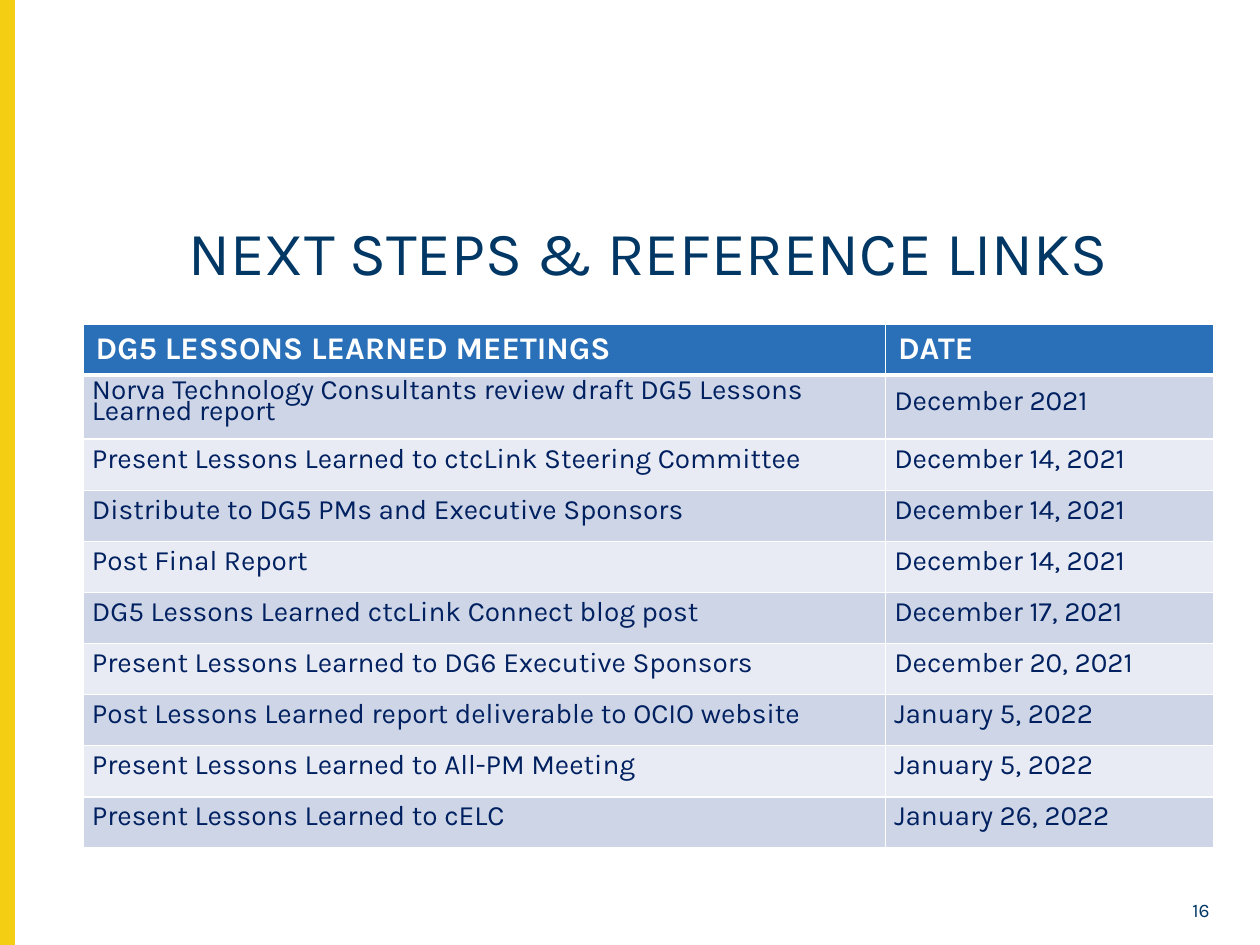
from lxml import etree
from pptx import Presentation
from pptx import util as u
from pptx.dml.color import RGBColor
from pptx.enum import shapes, text
from pptx.oxml import ns

WIDTH, HEIGHT = 10, 7.5
FONT = "Karla"
NAVY, CELL_NAVY, WHITE = "003764", "002060", "FFFFFF"
YELLOW, HEADER_BLUE = "F4CE12", "2A70B8"
BANDS = ["CDD5E6", "E8EBF3"]

HEADINGS = ["DG5 LESSONS LEARNED MEETINGS", "DATE"]
MEETINGS = [
    ("Norva Technology Consultants review draft DG5 Lessons Learned report", "December 2021"),
    ("Present Lessons Learned to ctcLink Steering Committee", "December 14, 2021"),
    ("Distribute to DG5 PMs and Executive Sponsors", "December 14, 2021"),
    ("Post Final Report", "December 14, 2021"),
    ("DG5 Lessons Learned ctcLink Connect blog post", "December 17, 2021"),
    ("Present Lessons Learned to DG6 Executive Sponsors", "December 20, 2021"),
    ("Post Lessons Learned report deliverable to OCIO website", "January 5, 2022"),
    ("Present Lessons Learned to All-PM Meeting", "January 5, 2022"),
    ("Present Lessons Learned to cELC", "January 26, 2022"),
]


def color(value):
    return RGBColor.from_string(value)


def inches(box):
    return [u.Inches(length) for length in box]


def add_run(paragraph, words, size, fill, bold=False):
    run = paragraph.add_run()
    run.text = words
    run.font.name = FONT
    run.font.size = u.Pt(size)
    run.font.bold = bold
    run.font.color.rgb = color(fill)


def add_label(slide, box, words, size, alignment, anchor, line_spacing=None):
    frame = slide.shapes.add_textbox(*inches(box)).text_frame
    frame.word_wrap = True
    frame.vertical_anchor = anchor
    paragraph = frame.paragraphs[0]
    paragraph.alignment = alignment
    paragraph.line_spacing = line_spacing
    add_run(paragraph, words, size, NAVY)


def add_side_bar(slide, box):
    bar = slide.shapes.add_shape(shapes.MSO_SHAPE.RECTANGLE, *inches(box))
    bar.shadow.inherit = False
    bar.fill.solid()
    bar.fill.fore_color.rgb = color(YELLOW)
    bar.line.color.rgb = color(YELLOW)
    bar.line.width = u.Pt(1)


def style_cell(cell, fill, bottom_width):
    # Borders come before the fill in the cell properties
    properties = cell._tc.get_or_add_tcPr()
    for side, width in (("L", 1), ("R", 1), ("T", 1), ("B", bottom_width)):
        border = etree.SubElement(properties, ns.qn(f"a:ln{side}"), w=str(u.Pt(width)))
        solid = etree.SubElement(border, ns.qn("a:solidFill"))
        etree.SubElement(solid, ns.qn("a:srgbClr"), val=WHITE)
    cell.fill.solid()
    cell.fill.fore_color.rgb = color(fill)


def add_header_cell(cell, words):
    style_cell(cell, HEADER_BLUE, 3)
    add_run(cell.text_frame.paragraphs[0], words, 18, WHITE, True)


def add_body_cell(cell, words, fill):
    style_cell(cell, fill, 1)
    cell.vertical_anchor = text.MSO_ANCHOR.MIDDLE
    cell.margin_left = cell.margin_right = u.Inches(0.07)
    cell.margin_top = cell.margin_bottom = 0
    paragraph = cell.text_frame.paragraphs[0]
    paragraph.line_spacing = u.Pt(12)
    paragraph.space_after = u.Pt(6)
    add_run(paragraph, words, 16, CELL_NAVY)


def add_schedule(slide, box):
    row_count = len(MEETINGS) + 1
    table = slide.shapes.add_table(row_count, len(HEADINGS), *inches(box)).table
    _, _, width, height = box

    # Column shares; the two-line row is taller, the others are equal
    for column, share in zip(table.columns, (0.71, 0.29)):
        column.width = u.Inches(width * share)
    tall_row = 0.51
    for index, row in enumerate(table.rows):
        row.height = u.Inches(tall_row if index == 1 else (height - tall_row) / (row_count - 1))

    for column, heading in enumerate(HEADINGS):
        add_header_cell(table.cell(0, column), heading)
    for index, meeting in enumerate(MEETINGS):
        for column, words in enumerate(meeting):
            add_body_cell(table.cell(index + 1, column), words, BANDS[index % 2])


def build_slide(presentation):
    slide = presentation.slides.add_slide(presentation.slide_layouts[6])
    add_side_bar(slide, (0, 0, 0.11, HEIGHT))
    # Title
    add_label(slide, (0.59, 1.72, 9.12, 0.87), "NEXT STEPS & REFERENCE LINKS", 35,
              text.PP_ALIGN.CENTER, text.MSO_ANCHOR.TOP, 0.9)
    add_schedule(slide, (0.66, 2.57, 8.97, 4.16))
    # Slide number
    add_label(slide, (9.19, 7.09, 0.51, 0.26), "16", 11,
              text.PP_ALIGN.RIGHT, text.MSO_ANCHOR.MIDDLE)


def main():
    presentation = Presentation()
    presentation.slide_width = u.Inches(WIDTH)
    presentation.slide_height = u.Inches(HEIGHT)
    build_slide(presentation)
    presentation.save("out.pptx")


if __name__ == "__main__":
    main()
